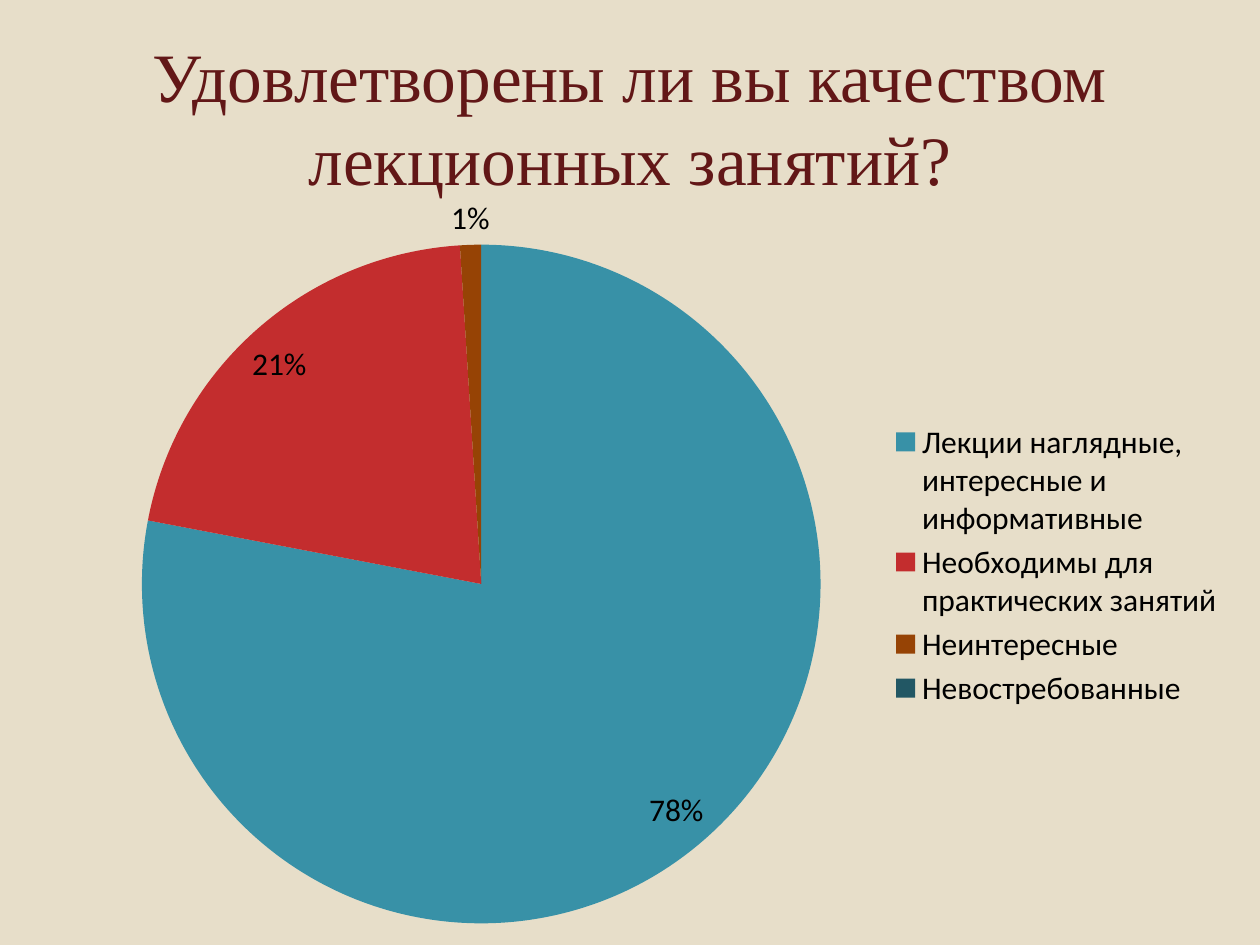
import pptx
import pptx.util
import pptx.chart.data
import pptx.dml.color
import pptx.enum.chart
import pptx.enum.text
import pptx.oxml
from dataclasses import dataclass
from pptx.util import Inches


@dataclass(frozen=True)
class Theme:
    background: str = "E7DEC9"
    title: str = "621717"
    text: str = "000000"
    slices: tuple = ("3891A7", "C32D2E", "964305", "225764")
    title_font: str = "Times New Roman"
    chart_font: str = "Calibri"
    title_size: float = 39.6
    chart_size: float = 18


theme = Theme()


def style_font(font, name, size, color):
    font.name = name
    font.size = pptx.util.Pt(size)
    font.color.rgb = pptx.dml.color.RGBColor.from_string(color)


def add_manual_layout(parent, index, x, y, w, h, inner=False):
    """Place a chart part by fractions of the chart's width and height."""
    for old in parent.findall(pptx.oxml.ns.qn("c:layout")):
        parent.remove(old)
    target = '<c:layoutTarget val="inner"/>' if inner else ""
    values = "".join(f'<c:{tag} val="{value}"/>' for tag, value in zip("xywh", (x, y, w, h)))
    parent.insert(index, pptx.oxml.parse_xml(
        f'<c:layout {pptx.oxml.ns.nsdecls("c")}><c:manualLayout>{target}'
        f'<c:xMode val="edge"/><c:yMode val="edge"/>{values}'
        '</c:manualLayout></c:layout>'))


prs = pptx.Presentation()
prs.slide_width, prs.slide_height = Inches(10), Inches(7.5)
s = prs.slides.add_slide(prs.slide_layouts[5])
s.background.fill.solid()
s.background.fill.fore_color.rgb = pptx.dml.color.RGBColor.from_string(theme.background)

# Title
title = s.shapes.title
title.left, title.top = Inches(0.5), Inches(0.3)
title.width, title.height = Inches(9), Inches(1.25)
tf = title.text_frame
tf.text = "Удовлетворены ли вы качеством лекционных занятий?"
tf.word_wrap = True
tf.vertical_anchor = pptx.enum.text.MSO_ANCHOR.MIDDLE
p = tf.paragraphs[0]
p.alignment = pptx.enum.text.PP_ALIGN.CENTER
style_font(p.runs[0].font, theme.title_font, theme.title_size, theme.title)

# Pie chart
data = pptx.chart.data.CategoryChartData()
data.categories = [
    "Лекции наглядные, интересные и информативные",
    "Необходимы для практических занятий",
    "Неинтересные",
    "Невостребованные",
]
data.add_series("Series 1", (78, 21, 1, 0))
chart = s.shapes.add_chart(
    pptx.enum.chart.XL_CHART_TYPE.PIE,
    Inches(0.67), Inches(1.44), Inches(9.13), Inches(6.03), data).chart
chart.has_title = False
style_font(chart.font, theme.chart_font, theme.chart_size, theme.text)
chart.plots[0].vary_by_categories = True
add_manual_layout(chart.plots[0]._element.getparent(), 0, 0.05, 0.08, 0.59, 0.9, inner=True)

series = chart.plots[0].series[0]
for i, color in enumerate(theme.slices):
    fill = series.points[i].format.fill
    fill.solid()
    fill.fore_color.rgb = pptx.dml.color.RGBColor.from_string(color)

labels = series.data_labels
labels.show_percentage = True
labels.show_value = False
labels.number_format = "0%;;"  # hides the zero slice
labels.number_format_is_linked = False
labels.position = pptx.enum.chart.XL_LABEL_POSITION.BEST_FIT
style_font(labels.font, theme.chart_font, theme.chart_size, theme.text)

chart.has_legend = True
legend = chart.legend
legend.position = pptx.enum.chart.XL_LEGEND_POSITION.RIGHT
legend.include_in_layout = False
style_font(legend.font, theme.chart_font, theme.chart_size, theme.text)
add_manual_layout(legend._element, 1, 0.7, 0.31, 0.29, 0.39)

prs.save("out.pptx")
